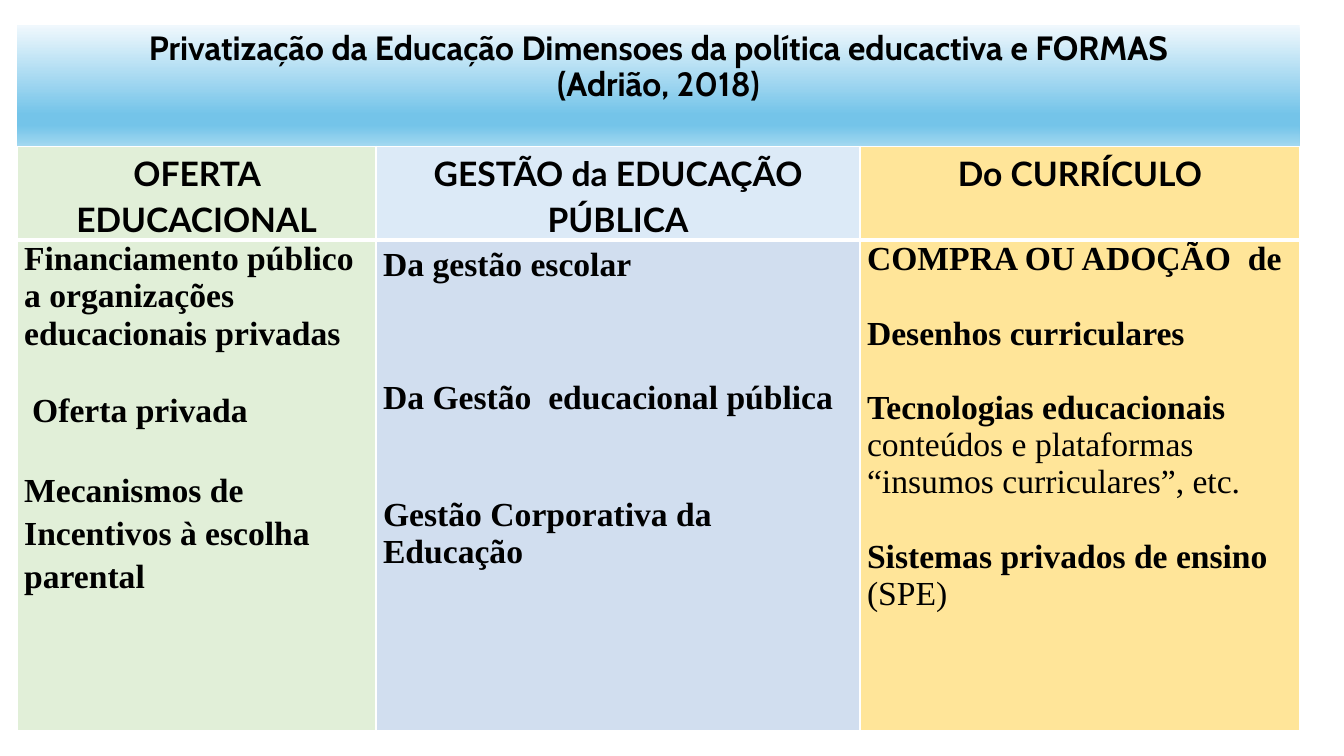
from lxml import etree
from pptx import Presentation
from pptx.dml.color import RGBColor
from pptx.enum.shapes import MSO_SHAPE
from pptx.enum.text import MSO_ANCHOR, PP_ALIGN
from pptx.oxml.ns import qn
from pptx.util import Inches, Pt

RECT = MSO_SHAPE.RECTANGLE
TOP = MSO_ANCHOR.TOP
LEFT, CENTER = PP_ALIGN.LEFT, PP_ALIGN.CENTER

HEX = {
    "ink": "000000", "line": "FFFFFF", "green": "E1EFD8",
    "pale": "DCEAF7", "blue": "D1DEEF", "gold": "FFE599",
    "mist": "F0F8FD", "sky": "74C4E9", "haze": "A2D8F0",
}
FADE = [(0, "mist"), (74, "sky"), (83, "sky"), (100, "haze")]
SERIF = "Times New Roman"
WIDE = 1.15
GAP = 26.6
SIDE, HEAD = 0.17, 0.25
COLS = [3.56, 4.8, 4.36]
ROWS = [0.93, 4.87]

TITLE = ("Privatização da Educação Dimensoes da política educactiva e FORMAS"
         "\v(Adrião, 2018)")
# Each column: heading, heading fill, body fill, body paragraphs
THEMES = [
    ("OFERTA EDUCACIONAL", "green", "green", [
        dict(bold="Financiamento público a organizações educacionais privadas"),
        dict(bold="Oferta privada", before=29, indent=0.08),
        dict(bold="Mecanismos de Incentivos à escolha parental",
             before=GAP, ls=WIDE),
    ]),
    ("GESTÃO da EDUCAÇÃO PÚBLICA", "pale", "blue", [
        dict(bold="Da gestão escolar", ls=WIDE),
        dict(bold="Da Gestão  educacional pública", before=64.5, ls=WIDE),
        dict(bold="Gestão Corporativa da Educação", before=57),
    ]),
    ("Do CURRÍCULO", "gold", "gold", [
        dict(bold="COMPRA OU ADOÇÃO  de"),
        dict(bold="Desenhos curriculares", before=GAP),
        dict(bold="Tecnologias educacionais",
             plain=" conteúdos e plataformas", before=GAP),
        dict(plain="“insumos curriculares”, etc."),
        dict(bold="Sistemas privados de ensino", plain=" (SPE)", before=GAP),
    ]),
]


def write(para, bold="", plain="", font=SERIF, size=24, align=LEFT,
          ls=1.0, before=0, indent=0):
    """Fill a paragraph with a bold part and then a plain part."""
    para.alignment = align
    para.line_spacing = ls
    para.space_before = Pt(before)
    if indent:
        para._p.get_or_add_pPr().set("marL", str(Inches(indent)))
    for text, heavy in ((bold, True), (plain, False)):
        for num, line in enumerate(text.split("\v") if text else []):
            if num:
                para.add_line_break()
            run = para.add_run()
            run.text = line
            run.font.name = font
            run.font.size = Pt(size)
            run.font.bold = heavy
            run.font.color.rgb = RGBColor.from_string(HEX["ink"])


def shade(shape):
    """Give a shape the vertical fade."""
    shape.fill.gradient()
    shape.fill.gradient_angle = 270
    stops = shape.element.spPr.find(".//" + qn("a:gsLst"))
    for stop in list(stops):
        stops.remove(stop)
    for pos, name in FADE:
        stop = etree.SubElement(stops, qn("a:gs"), pos=str(pos * 1000))
        etree.SubElement(stop, qn("a:srgbClr"), val=HEX[name])


def edge(cell, **widths):
    """Draw cell borders, given in points for L, R, T and B in that order."""
    props = cell._tc.get_or_add_tcPr()
    for num, (side, width) in enumerate(widths.items()):
        line = etree.Element(qn("a:ln" + side), w=str(Pt(width)))
        fill = etree.SubElement(line, qn("a:solidFill"))
        etree.SubElement(fill, qn("a:srgbClr"), val=HEX["line"])
        props.insert(num, line)


def banner(slide, left, top, width, height):
    box = slide.shapes.add_shape(RECT, left, top, width, height)
    box.shadow.inherit = False
    box.line.fill.background()
    shade(box)
    frame = box.text_frame
    frame.word_wrap = True
    frame.vertical_anchor = TOP
    frame.margin_top = Inches(0.06)
    write(frame.paragraphs[0], TITLE, font="Cabin", align=CENTER, ls=0.9)


def dress(cell, color, paras, **widths):
    cell.margin_left = cell.margin_right = Inches(0.07)
    cell.margin_top, cell.margin_bottom = Inches(0.01), 0
    cell.vertical_anchor = TOP
    cell.fill.solid()
    cell.fill.fore_color.rgb = RGBColor.from_string(HEX[color])
    edge(cell, **widths)
    frame = cell.text_frame
    for num, form in enumerate(paras):
        write(frame.add_paragraph() if num else frame.paragraphs[0], **form)


def matrix(slide, left, top, width, height):
    grid = slide.shapes.add_table(len(ROWS), len(COLS), left, top,
                                  width, height).table
    grid.first_row = grid.horz_banding = False
    for row, size in zip(grid.rows, ROWS):
        row.height = Inches(size)
    for num, (name, light, fill, body) in enumerate(THEMES):
        grid.columns[num].width = Inches(COLS[num])
        head = dict(bold=name, font="Lato", align=CENTER, ls=WIDE)
        dress(grid.cell(0, num), light, [head], L=1, R=1, T=1, B=3)
        dress(grid.cell(1, num), fill, body, L=1, R=1, T=3, B=1)


def main():
    deck = Presentation()
    deck.slide_width, deck.slide_height = Inches(13.33), Inches(7.5)
    slide = deck.slides.add_slide(deck.slide_layouts[6])
    left, top, tall = Inches(SIDE), Inches(HEAD), Inches(1.2)
    width = Inches(sum(COLS))
    banner(slide, left, top, width, tall)
    matrix(slide, left, top + tall, width, Inches(sum(ROWS)))
    deck.save("out.pptx")


if __name__ == "__main__":
    main()
